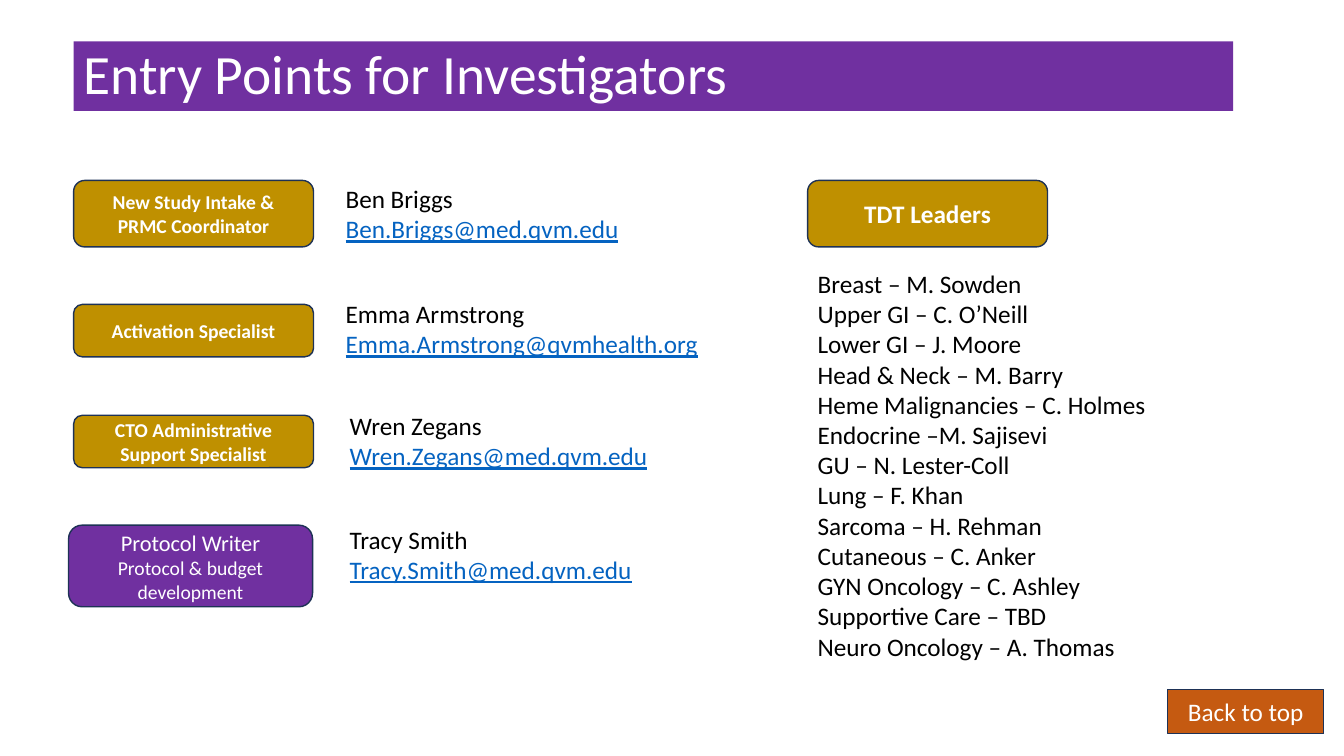
from dataclasses import dataclass

from lxml.etree import SubElement
from pptx import Presentation
from pptx.dml.color import RGBColor
from pptx.enum.shapes import MSO_SHAPE
from pptx.enum.text import MSO_ANCHOR, MSO_AUTO_SIZE, PP_ALIGN
from pptx.oxml.ns import qn
from pptx.util import Inches, Pt


@dataclass(frozen=True)
class Theme:
    font: str = "Calibri"
    purple: str = "7030A0"
    gold: str = "BF9000"
    orange: str = "C55A11"
    outline: str = "1E3256"
    white: str = "FFFFFF"
    black: str = "000000"
    email: str = "0563C1"
    title: float = 39.6
    body: float = 18
    role: float = 16
    label: float = 14


THEME = Theme()

# Content
TITLE = "Entry Points for Investigators"
BACK_BUTTON = "Back to top"
LEADERS_HEADING = "TDT Leaders"
ROLES = [
    # label, left, top, width, height
    ("New Study Intake & PRMC Coordinator", 0.73, 1.79, 2.38, 0.66),
    ("Activation Specialist", 0.73, 3.02, 2.38, 0.52),
    ("CTO Administrative Support Specialist", 0.73, 4.12, 2.38, 0.52),
]
WRITER_ROLE = ("Protocol Writer", "Protocol & budget development")
CONTACTS = [
    # name, email, left, top
    ("Ben Briggs", "Ben.Briggs@med.qvm.edu", 3.33, 1.77),
    ("Emma Armstrong", "Emma.Armstrong@qvmhealth.org", 3.33, 2.91),
    ("Wren Zegans", "Wren.Zegans@med.qvm.edu", 3.37, 4.02),
    ("Tracy Smith", "Tracy.Smith@med.qvm.edu", 3.37, 5.15),
]
LEADERS = [
    "Breast – M. Sowden",
    "Upper GI – C. O’Neill",
    "Lower GI – J. Moore",
    "Head & Neck – M. Barry",
    "Heme Malignancies – C. Holmes",
    "Endocrine –M. Sajisevi",
    "GU – N. Lester-Coll",
    "Lung – F. Khan",
    "Sarcoma – H. Rehman",
    "Cutaneous – C. Anker",
    "GYN Oncology – C. Ashley",
    "Supportive Care – TBD",
    "Neuro Oncology – A. Thomas",
]

# Text formats
LABEL = {"size": THEME.label, "color": THEME.white, "bold": True}
HEADING = {**LABEL, "size": THEME.body}
BUTTON = {**HEADING, "bold": False}
BODY = {"size": THEME.body, "color": THEME.black}
EMAIL = {"size": THEME.body, "color": THEME.email, "underline": True}
TITLE_TEXT = {"size": THEME.title, "color": THEME.white}


def place(shape, left, top, width, height):
    box = {"left": left, "top": top, "width": width, "height": height}
    for name, value in box.items():
        setattr(shape, name, Inches(value))


def fill_solid(shape, color):
    shape.fill.solid()
    shape.fill.fore_color.rgb = RGBColor.from_string(color)


def write(shape, lines, alignment=PP_ALIGN.LEFT, anchor=MSO_ANCHOR.TOP, spacing=1.0):
    """Write one paragraph for each (text, format) pair."""
    frame = shape.text_frame
    frame.word_wrap = True
    frame.auto_size = MSO_AUTO_SIZE.NONE
    frame.vertical_anchor = anchor
    for index, (text, text_format) in enumerate(lines):
        paragraph = frame.add_paragraph() if index else frame.paragraphs[0]
        layout = {"alignment": alignment, "line_spacing": spacing, "space_before": Pt(0)}
        for name, value in layout.items():
            setattr(paragraph, name, value)
        run = paragraph.add_run()
        run.text = text
        run.font.name = THEME.font
        for name, value in text_format.items():
            if name == "color":
                run.font.color.rgb = RGBColor.from_string(value)
            else:
                setattr(run.font, name, Pt(value) if name == "size" else value)


def add_box(slide, lines, box, color, preset=MSO_SHAPE.ROUNDED_RECTANGLE):
    shape = slide.shapes.add_shape(preset, *map(Inches, box))
    shape.shadow.inherit = False
    fill_solid(shape, color)
    shape.line.color.rgb = RGBColor.from_string(THEME.outline)
    shape.line.width = Pt(1)
    write(shape, lines, PP_ALIGN.CENTER, MSO_ANCHOR.MIDDLE)


def remove_bullets(shape):
    for paragraph in shape.text_frame.paragraphs:
        properties = paragraph._p.get_or_add_pPr()
        properties.set("marL", "0")
        properties.set("indent", "0")
        SubElement(properties, qn("a:buNone"))


def main():
    presentation = Presentation()
    presentation.slide_width = Inches(13.33)
    presentation.slide_height = Inches(7.5)
    slide = presentation.slides.add_slide(presentation.slide_layouts[1])

    # Title bar
    title = slide.shapes.title
    place(title, 0.73, 0.41, 11.5, 0.69)
    fill_solid(title, THEME.purple)
    write(title, [(TITLE, TITLE_TEXT)], anchor=MSO_ANCHOR.MIDDLE, spacing=0.9)

    # Back button
    add_box(slide, [(BACK_BUTTON, BUTTON)], (11.58, 6.84, 1.55, 0.44),
            THEME.orange, MSO_SHAPE.RECTANGLE)

    # Roles
    for label, *box in ROLES:
        add_box(slide, [(label, LABEL)], box, THEME.gold)
    role, duty = WRITER_ROLE
    writer_lines = [(role, {**BUTTON, "size": THEME.role}),
                    (duty, {**BUTTON, "size": THEME.label})]
    add_box(slide, writer_lines, (0.68, 5.21, 2.42, 0.81), THEME.purple)

    # Contacts
    for name, email, left, top in CONTACTS:
        contact = slide.shapes.add_textbox(*map(Inches, (left, top, 3.8, 0.71)))
        write(contact, [(name, BODY), (email, EMAIL)])

    # Team leaders
    add_box(slide, [(LEADERS_HEADING, HEADING)], (8.01, 1.79, 2.38, 0.66), THEME.gold)
    leaders = slide.placeholders[1]
    place(leaders, 8.01, 2.61, 3.49, 4.04)
    write(leaders, [(leader, BODY) for leader in LEADERS])
    remove_bullets(leaders)

    presentation.save("out.pptx")


if __name__ == "__main__":
    main()
